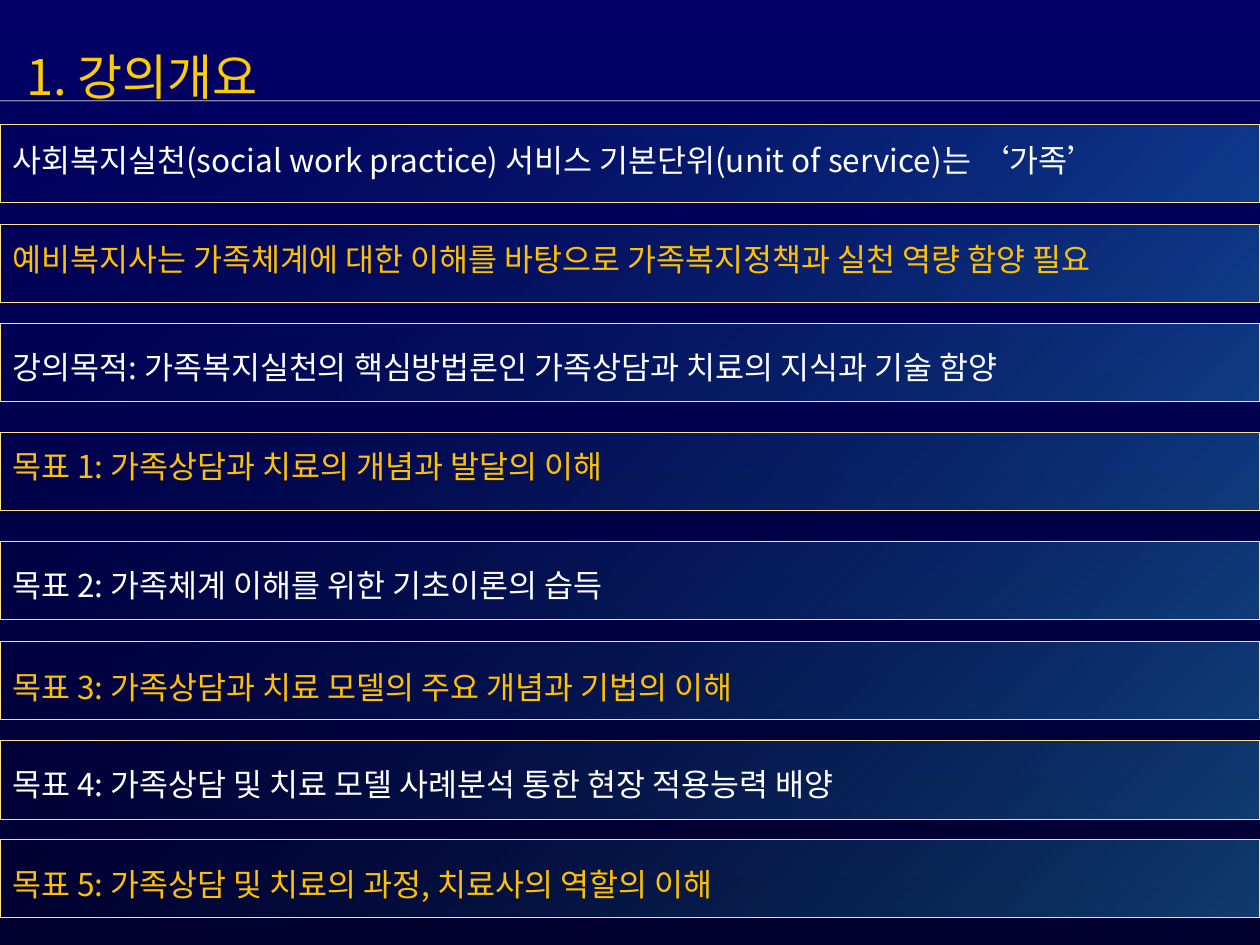
import lxml.etree
import pptx
import pptx.dml.color
import pptx.enum.shapes
import pptx.enum.text
import pptx.oxml.ns
import pptx.util
from pptx.dml.color import RGBColor
from pptx.util import Inches

FONT = "Noto Sans CJK KR"
WHITE = RGBColor(0xFF, 0xFF, 0xFF)
AMBER = RGBColor(0xFF, 0xC0, 0x00)
TITLE_YELLOW = RGBColor(0xFF, 0xCC, 0x00)
NAVY = RGBColor(0x00, 0x00, 0x66)
DARK_NAVY = RGBColor(0x00, 0x00, 0x2F)
TEAL = RGBColor(0x18, 0x5E, 0x76)
SKY = RGBColor(0x33, 0xCC, 0xFF)
CREAM = RGBColor(0xFF, 0xE3, 0x8B)
SILVER = RGBColor(0xC0, 0xC0, 0xC0)
qn = pptx.oxml.ns.qn


def set_opacity(element, percents):
    for color, percent in zip(element.iter(qn("a:srgbClr")), percents):
        lxml.etree.SubElement(color, qn("a:alpha"), val=str(percent * 1000))


def add_text(left, top, width, height, text, size, color, wrap):
    box = slide.shapes.add_textbox(Inches(left), Inches(top), Inches(width), Inches(height))
    frame = box.text_frame
    frame.word_wrap = wrap
    frame.auto_size = pptx.enum.text.MSO_AUTO_SIZE.SHAPE_TO_FIT_TEXT
    paragraph = frame.paragraphs[0]
    paragraph.text = text
    paragraph.font.size = pptx.util.Pt(size)
    paragraph.font.name = FONT
    paragraph.font.color.rgb = color
    properties = paragraph._p.pPr.find(qn("a:defRPr"))
    lxml.etree.SubElement(properties, qn("a:ea"), typeface=FONT)


presentation = pptx.Presentation()
presentation.slide_width = Inches(10)
presentation.slide_height = Inches(7.5)
slide = presentation.slides.add_slide(presentation.slide_layouts[6])

# Background, darker towards the bottom
background = slide.background.fill
background.gradient()
background.gradient_angle = 270
for stop, color in zip(background.gradient_stops, (NAVY, DARK_NAVY)):
    stop.color.rgb = color

# Title and the rule under it
rule = slide.shapes.add_connector(
    pptx.enum.shapes.MSO_CONNECTOR.STRAIGHT, Inches(0), Inches(0.8), Inches(10), Inches(0.8))
rule.line.color.rgb = SILVER
rule.line.width = pptx.util.Pt(0.75)
set_opacity(rule._element.spPr, [70])
lxml.etree.SubElement(rule._element.spPr, qn("a:effectLst"))
add_text(0.11, 0.32, 2.14, 0.57, "1. 강의개요", 28, TITLE_YELLOW, False)

# Bars: top of the bar, top of its text, wording
bars = [
    (0.99, 1.07, "사회복지실천(social work practice) 서비스 기본단위(unit of service)는 ‘가족’"),
    (1.78, 1.86, "예비복지사는 가족체계에 대한 이해를 바탕으로 가족복지정책과 실천 역량 함양 필요"),
    (2.57, 2.71, "강의목적: 가족복지실천의 핵심방법론인 가족상담과 치료의 지식과 기술 함양"),
    (3.43, 3.50, "목표 1: 가족상담과 치료의 개념과 발달의 이해"),
    (4.30, 4.44, "목표 2: 가족체계 이해를 위한 기초이론의 습득"),
    (5.09, 5.25, "목표 3: 가족상담과 치료 모델의 주요 개념과 기법의 이해"),
    (5.88, 6.02, "목표 4: 가족상담 및 치료 모델 사례분석 통한 현장 적용능력 배양"),
    (6.66, 6.82, "목표 5: 가족상담 및 치료의 과정, 치료사의 역할의 이해"),
]
for index, (bar_top, text_top, text) in enumerate(bars):
    bar = slide.shapes.add_shape(
        pptx.enum.shapes.MSO_SHAPE.RECTANGLE, Inches(0), Inches(bar_top), Inches(10), Inches(0.62))
    bar.shadow.inherit = False
    bar.fill.gradient()
    bar.fill.gradient_angle = 315
    for stop, color in zip(bar.fill.gradient_stops, (TEAL, SKY)):
        stop.color.rgb = color
    set_opacity(bar._element.spPr.find(qn("a:gradFill")), [0, 30])
    bar.line.color.rgb = CREAM
    bar.line.width = pptx.util.Pt(0.5)
    add_text(0, text_top, 10, 0.4, text, 18, AMBER if index % 2 else WHITE, True)

presentation.save("out.pptx")
